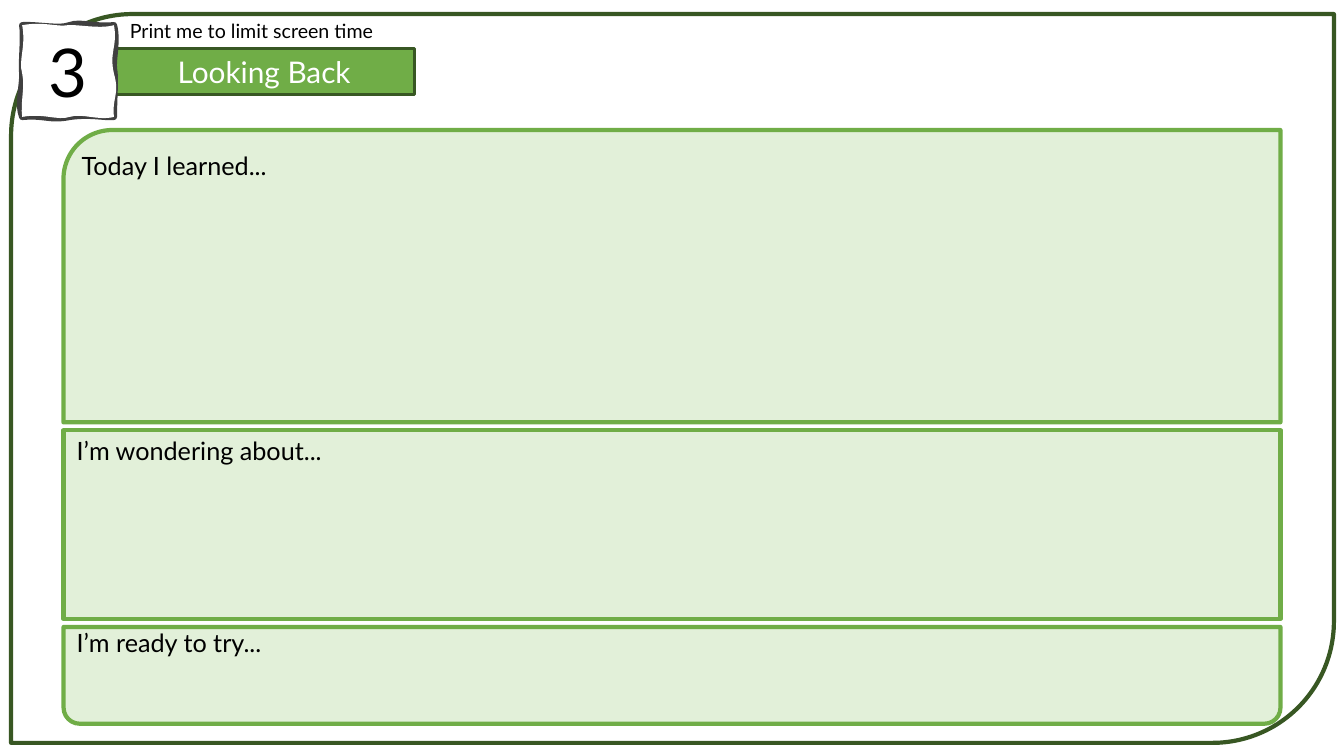
from dataclasses import dataclass

from lxml.etree import SubElement
from pptx import Presentation
from pptx.dml.color import RGBColor
from pptx.enum.shapes import MSO_SHAPE
from pptx.enum.text import MSO_ANCHOR, PP_ALIGN
from pptx.oxml.ns import qn
from pptx.util import Inches, Pt

TITLE = "Looking Back"
NUMBER = "3"
PRINT_HINT = "Print me to limit screen time"

# Panels from top to bottom: outline, corner adjustments, height, mirrored, rotation,
# prompt, then the prompt's box: offset from the panel's corner, and size
PANELS = [
    (MSO_SHAPE.ROUND_1_RECTANGLE, [0.167], 2.9, True, 0,
     "Today I learned...", (0.05, 0.07), (3.73, 2.39)),
    (MSO_SHAPE.RECTANGLE, [], 1.87, False, 0,
     "I’m wondering about...", (0, -0.08), (5.72, 1.5)),
    (MSO_SHAPE.ROUND_2_SAME_RECTANGLE, [0.167, 0], 0.96, False, 180,
     "I’m ready to try...", (0, -0.13), (12.07, 0.96)),
]
PANEL_LEFT, PANEL_TOP, PANEL_WIDTH, PANEL_GAP = 0.63, 1.29, 12.07, 0.08

# Wavy number card, in hundredths of an inch; each curve is two controls and an end
CARD_LEFT, CARD_TOP, CARD_SIZE = 22, 25, 91
CARD_EDGE = [
    [(36, 24), (59, 29), (69, 25)], [(80, 21), (93, 27), (113, 25)],
    [(117, 40), (112, 59), (113, 68)], [(115, 77), (113, 95), (113, 116)],
    [(103, 117), (90, 113), (69, 116)], [(49, 120), (45, 114), (22, 116)],
    [(17, 104), (23, 82), (22, 72)], [(21, 62), (24, 35), (22, 25)],
]
CARD_FACE = [
    [(43, 21), (57, 27), (67, 25)], [(77, 24), (99, 29), (113, 25)],
    [(117, 46), (108, 51), (113, 73)], [(119, 94), (111, 96), (113, 116)],
    [(97, 120), (82, 112), (69, 116)], [(57, 120), (43, 112), (22, 116)],
    [(20, 101), (25, 87), (22, 73)], [(18, 59), (26, 47), (22, 25)],
]


@dataclass(frozen=True)
class Theme:
    font: str = "Lato"
    dark_green: str = "385723"
    green: str = "70AD47"
    pale_green: str = "E2F0D9"
    charcoal: str = "404040"
    black: str = "000000"
    white: str = "FFFFFF"
    number_size: float = 48
    title_size: float = 21.3
    prompt_size: float = 18
    hint_size: float = 14
    frame_line: float = 3
    title_line: float = 2.25
    card_line: float = 4.5


THEME = Theme()


def style(shape, fill, line, width):
    shape.shadow.inherit = False
    if fill:
        shape.fill.solid()
        shape.fill.fore_color.rgb = RGBColor.from_string(fill)
    else:
        shape.fill.background()
    shape.line.color.rgb = RGBColor.from_string(line)
    shape.line.width = Pt(width)


def add_box(slide, kind, box, fill, line, width):
    shape = slide.shapes.add_shape(kind, *map(Inches, box))
    style(shape, fill, line, width)
    return shape


def write(shape, text, size, color, alignment=PP_ALIGN.LEFT, anchor=MSO_ANCHOR.TOP):
    frame = shape.text_frame
    frame.word_wrap = True
    frame.vertical_anchor = anchor
    paragraph = frame.paragraphs[0]
    paragraph.alignment = alignment
    run = paragraph.add_run()
    run.text = text
    run.font.name = THEME.font
    run.font.size = Pt(size)
    run.font.color.rgb = RGBColor.from_string(color)


def add_text(slide, box, text, size, inset=None):
    shape = slide.shapes.add_textbox(*map(Inches, box))
    write(shape, text, size, THEME.black)
    if inset is not None:
        frame = shape.text_frame
        frame.margin_left = frame.margin_right = Inches(inset)
        frame.margin_top = frame.margin_bottom = Inches(inset)


def add_contour(contours, curves, **options):
    """Append one closed curved contour that starts at the card's top left corner."""
    contour = SubElement(contours, qn("a:path"), w=str(CARD_SIZE), h=str(CARD_SIZE), **options)

    def add_points(tag, points):
        command = SubElement(contour, qn(tag))
        for x, y in points:
            SubElement(command, qn("a:pt"), x=str(x - CARD_LEFT), y=str(y - CARD_TOP))

    add_points("a:moveTo", [(CARD_LEFT, CARD_TOP)])
    for curve in curves:
        add_points("a:cubicBezTo", curve)
    SubElement(contour, qn("a:close"))


def add_number_card(slide):
    right, bottom = CARD_LEFT + CARD_SIZE, CARD_TOP + CARD_SIZE
    builder = slide.shapes.build_freeform(CARD_LEFT, CARD_TOP, scale=Inches(0.01))
    builder.add_line_segments([(right, CARD_TOP), (right, bottom), (CARD_LEFT, bottom)])
    card = builder.convert_to_shape()
    contours = card._element.spPr.find(".//" + qn("a:pathLst"))
    for straight_contour in list(contours):
        contours.remove(straight_contour)
    add_contour(contours, CARD_EDGE, fill="none")
    add_contour(contours, CARD_FACE, stroke="0")
    style(card, THEME.white, THEME.charcoal, THEME.card_line)
    write(card, NUMBER, THEME.number_size, THEME.black, PP_ALIGN.CENTER, MSO_ANCHOR.MIDDLE)


def add_panels(slide):
    top = PANEL_TOP
    prompts = []
    for kind, adjustments, height, mirrored, rotation, prompt, offset, size in PANELS:
        panel = add_box(slide, kind, (PANEL_LEFT, top, PANEL_WIDTH, height),
                        THEME.pale_green, THEME.green, THEME.frame_line)
        for index, value in enumerate(adjustments):
            panel.adjustments[index] = value
        panel.rotation = rotation
        if mirrored:
            panel._element.spPr.find(qn("a:xfrm")).set("flipH", "1")
        prompts.append(((PANEL_LEFT + offset[0], top + offset[1], *size), prompt))
        top += height + PANEL_GAP
    for box, prompt in prompts:
        add_text(slide, box, prompt, THEME.prompt_size, inset=0.13)


def main():
    presentation = Presentation()
    presentation.slide_width, presentation.slide_height = Inches(13.33), Inches(7.5)
    slide = presentation.slides.add_slide(presentation.slide_layouts[6])

    add_box(slide, MSO_SHAPE.ROUND_2_DIAG_RECTANGLE, (0.11, 0.14, 13.12, 7.23),
            None, THEME.dark_green, THEME.frame_line)
    title = add_box(slide, MSO_SHAPE.RECTANGLE, (1.13, 0.48, 2.98, 0.46),
                    THEME.green, THEME.dark_green, THEME.title_line)
    write(title, TITLE, THEME.title_size, THEME.white, PP_ALIGN.CENTER, MSO_ANCHOR.MIDDLE)
    add_number_card(slide)
    add_panels(slide)
    add_text(slide, (1.19, 0.14, 3.43, 0.34), PRINT_HINT, THEME.hint_size)
    presentation.save("out.pptx")


if __name__ == "__main__":
    main()
